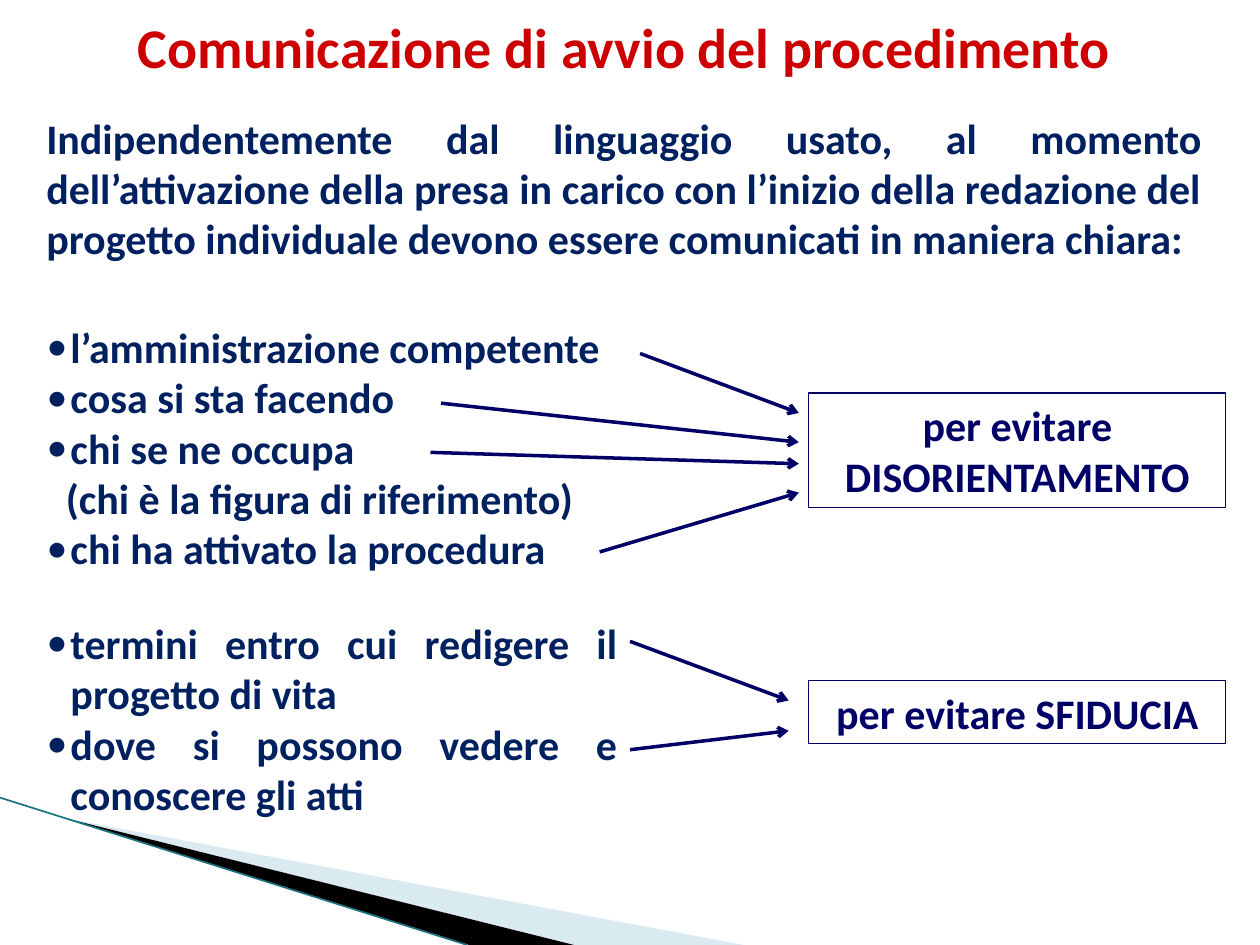
from lxml import etree
from pptx import Presentation
from pptx.dml.color import RGBColor
from pptx.enum.shapes import MSO_CONNECTOR, MSO_SHAPE
from pptx.enum.text import MSO_ANCHOR, MSO_AUTO_SIZE, PP_ALIGN
from pptx.oxml.ns import qn
from pptx.util import Pt

STRAIGHT = MSO_CONNECTOR.STRAIGHT
RECTANGLE = MSO_SHAPE.RECTANGLE
TOP, MIDDLE = MSO_ANCHOR.TOP, MSO_ANCHOR.MIDDLE
NO_FIT = MSO_AUTO_SIZE.NONE
CENTER, JUSTIFY = PP_ALIGN.CENTER, PP_ALIGN.JUSTIFY

RED, NAVY, INDIGO = "CC0000", "002060", "000066"
PALE_BLUE, BLACK, TEAL = "A0CBDC", "000000", "1B7283"
LEFT = 19.4
LIST_WIDTH = 340.6
LIST_INDENT = 13.7
RESULT_LEFT, RESULT_WIDTH = 462.2, 238.3


def color(hex_code):
    return RGBColor.from_string(hex_code)


def place(shape, box):
    shape.left, shape.top, shape.width, shape.height = map(Pt, box)


def format_text(shape, hex_code, align, size=24, anchor=TOP):
    frame = shape.text_frame
    frame.word_wrap = True
    frame.auto_size = NO_FIT
    frame.vertical_anchor = anchor
    for para in frame.paragraphs:
        para.alignment = align
        para.space_before = para.space_after = Pt(0)
        for span in para.runs:
            span.font.name = "Calibri"
            span.font.size = Pt(size)
            span.font.bold = True
            span.font.color.rgb = color(hex_code)


def set_bullet(para, symbol, margin, indent):
    props = para._p.get_or_add_pPr()
    props.set("marL", str(Pt(margin)))
    props.set("indent", str(Pt(indent)))
    if symbol:
        font = etree.SubElement(props, qn("a:buFont"))
        font.set("typeface", "Calibri")
        etree.SubElement(props, qn("a:buChar")).set("char", symbol)
    else:
        etree.SubElement(props, qn("a:buNone"))


def add_list(holder, box, items):
    """Fill a body placeholder; each item is (text, has bullet)."""
    place(holder, box)
    frame = holder.text_frame
    frame.text = "\n".join(text for text, _ in items)
    for para, (_, bulleted) in zip(frame.paragraphs, items):
        if bulleted:
            set_bullet(para, "•", LIST_INDENT, -LIST_INDENT)
        else:
            set_bullet(para, None, 11, 0)
    format_text(holder, NAVY, JUSTIFY)


def add_line(page, start, end, hex_code, width, arrow=False):
    line = page.shapes.add_connector(STRAIGHT, *map(Pt, start + end))
    line.line.color.rgb = color(hex_code)
    line.line.width = Pt(width)
    if arrow:
        head = etree.SubElement(line.line._get_or_add_ln(), qn("a:tailEnd"))
        head.set("type", "arrow")
    etree.SubElement(line._element.spPr, qn("a:effectLst"))


def add_wedge(page, points, hex_code, opacity=100):
    builder = page.shapes.build_freeform(*points[0], scale=Pt(1))
    builder.add_line_segments(points[1:], close=True)
    wedge = builder.convert_to_shape()
    wedge.shadow.inherit = False
    wedge.line.fill.background()
    wedge.fill.solid()
    wedge.fill.fore_color.rgb = color(hex_code)
    if opacity < 100:
        tint = wedge._element.spPr.find(".//" + qn("a:srgbClr"))
        etree.SubElement(tint, qn("a:alpha")).set("val", str(opacity * 1000))


def add_corner(page, left, top, right, bottom):
    """Decorative wedges in the lower left corner."""
    tip = (left + 39, top + 12)
    add_wedge(page, [tip, (right, bottom), (328, bottom)], PALE_BLUE, 40)
    add_wedge(page, [tip, (328, bottom), (268, bottom)], BLACK)
    add_line(page, (left, top), (267, bottom), TEAL, 0.95)


def add_result(page, top, height, text, arrows):
    """Framed outcome with the arrows that lead to it."""
    frame = page.shapes.add_shape(RECTANGLE, 0, 0, 0, 0)
    place(frame, (RESULT_LEFT, top, RESULT_WIDTH, height))
    frame.shadow.inherit = False
    frame.fill.background()
    frame.line.color.rgb = color(INDIGO)
    frame.line.width = Pt(0.75)
    frame.text_frame.text = text
    format_text(frame, INDIGO, CENTER, anchor=MIDDLE)
    for start, end in arrows:
        add_line(page, start, end, INDIGO, 2, arrow=True)


def main():
    deck = Presentation()
    deck.slide_width, deck.slide_height = Pt(720), Pt(540)
    page = deck.slides.add_slide(deck.slide_layouts[3])
    title, first_list, second_list = page.placeholders

    add_corner(page, 0, 455.8, 425, 540)

    # Title and introduction
    place(title, (64.8, 3.6, 584, 46))
    title.text_frame.text = "Comunicazione di avvio del procedimento"
    format_text(title, RED, CENTER, size=32)
    intro = page.shapes.add_textbox(0, 0, 0, 0)
    place(intro, (LEFT, 60.5, 674.6, 94.3))
    intro.text_frame.text = (
        "Indipendentemente dal linguaggio usato, al momento dell’attivazione "
        "della presa in carico con l’inizio della redazione del progetto "
        "individuale devono essere comunicati in maniera chiara:")
    format_text(intro, NAVY, JUSTIFY)

    # What to communicate
    add_list(first_list, (LEFT, 180, LIST_WIDTH, 152.6), [
        ("l’amministrazione competente", True),
        ("cosa si sta facendo", True),
        ("chi se ne occupa", True),
        ("(chi è la figura di riferimento)", False),
        ("chi ha attivato la procedura", True),
    ])
    add_list(second_list, (LEFT, 349.2, LIST_WIDTH, 123.8), [
        ("termini entro cui redigere il progetto di vita", True),
        ("dove si possono vedere e conoscere gli atti", True),
    ])

    # What it avoids
    add_result(page, 224.6, 65.5, "per evitare DISORIENTAMENTO", [
        ((365.8, 202), (456.5, 236)),
        ((252, 230.4), (456.5, 252.7)),
        ((246, 258.5), (456.5, 265)),
        ((342.7, 315.4), (456.5, 281.5)),
    ])
    add_result(page, 389, 36, "per evitare SFIDUCIA", [
        ((360, 366.5), (450.7, 400.3)),
        ((360, 428.4), (450.7, 417.6)),
    ])

    deck.save("out.pptx")


if __name__ == "__main__":
    main()
